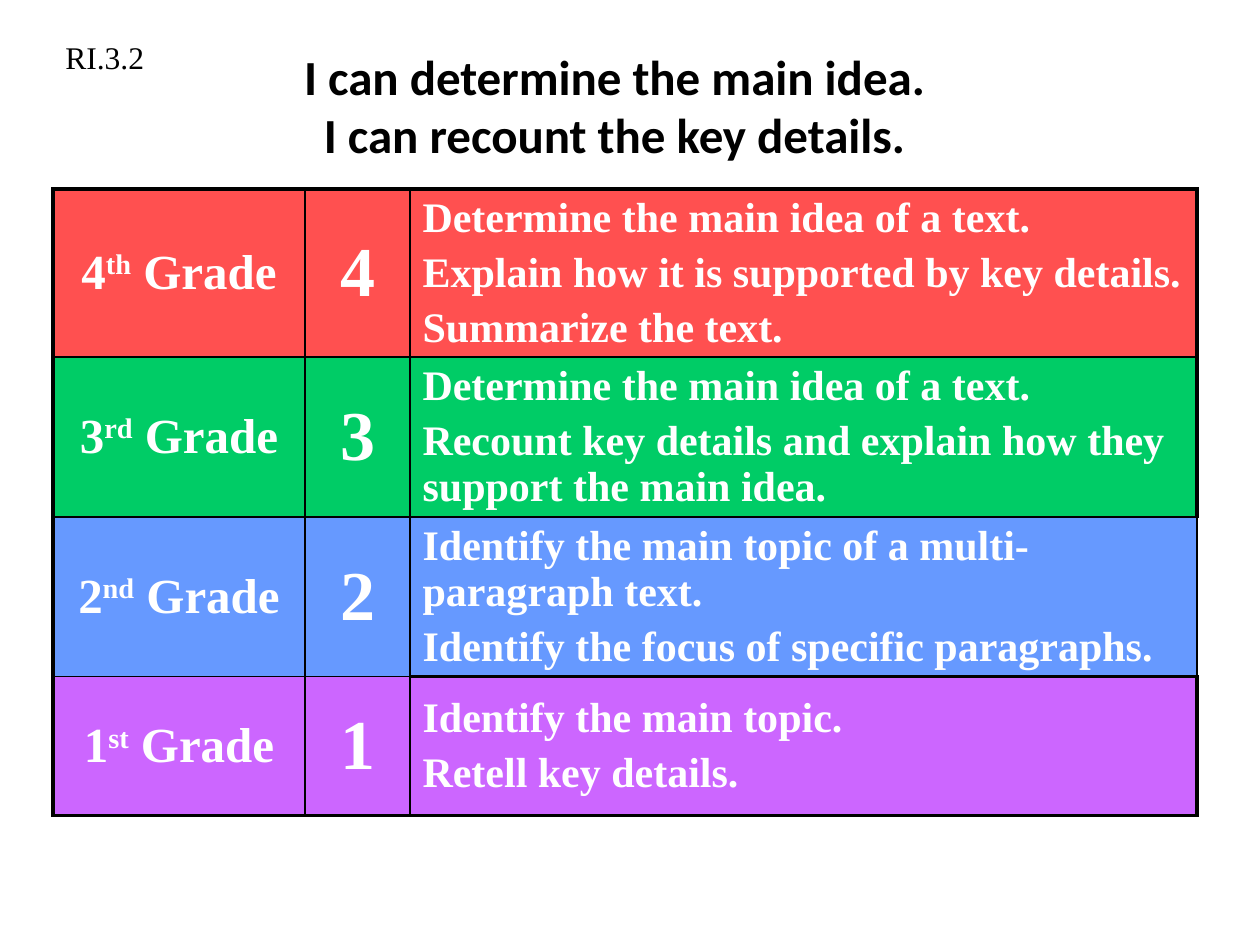
from dataclasses import dataclass

from lxml.etree import SubElement
from pptx import Presentation
from pptx.dml.color import RGBColor
from pptx.enum.text import MSO_ANCHOR, MSO_AUTO_SIZE, PP_ALIGN
from pptx.oxml import parse_xml
from pptx.oxml.ns import nsdecls, qn
from pptx.util import Emu, Pt

PX_PER_INCH = 126
COLORS = {
    "black": "000000",
    "white": "FFFFFF",
    "red": "FF5050",
    "green": "00CC66",
    "blue": "6699FF",
    "purple": "CC66FF",
}
SERIF = "Times New Roman"
COLUMN_WIDTHS = (252, 105, 787)


@dataclass(frozen=True)
class Borders:
    """Line widths in points, in the order the table cell stores them."""
    left: float
    right: float
    top: float
    bottom: float


@dataclass(frozen=True)
class Grade:
    number: str
    suffix: str
    color: str
    height: int
    goals: tuple[str, ...]
    borders: tuple[Borders, Borders, Borders]


GRADES = (
    Grade("4", "th", "red", 139,
          ("Determine the main idea of a text.",
           "Explain how it is supported by key details.",
           "Summarize the text."),
          (Borders(2.25, 1, 2.25, 1.5), Borders(1, 1, 2.25, 1.5), Borders(1, 2.25, 2.25, 1.5))),
    Grade("3", "rd", "green", 160,
          ("Determine the main idea of a text.",
           "Recount key details and explain how they support the main idea."),
          (Borders(2.25, 1, 1.5, 1), Borders(1, 1, 1.5, 1), Borders(1, 2.25, 1.5, 1.5))),
    Grade("2", "nd", "blue", 139,
          ("Identify the main topic of a multi-paragraph text.",
           "Identify the focus of specific paragraphs."),
          (Borders(2.25, 1.5, 1, 1), Borders(1.5, 1.5, 1, 1), Borders(1.5, 1.5, 1.5, 1.5))),
    Grade("1", "st", "purple", 139,
          ("Identify the main topic.", "Retell key details."),
          (Borders(2.25, 1, 1, 1.5), Borders(1, 1, 1, 1.5), Borders(1, 2.25, 1.5, 1.5))),
)


def px(length: int) -> Emu:
    return Emu(round(length * 914400 / PX_PER_INCH))


def rgb(name: str) -> RGBColor:
    return RGBColor.from_string(COLORS[name])


def add_run(paragraph, text: str, size: int, font: str = SERIF, color: str = "white",
            bold: bool = True, raised: bool = False) -> None:
    run = paragraph.add_run()
    run.text = text
    run.font.size = Pt(size)
    run.font.name = font
    run.font.bold = bold
    run.font.color.rgb = rgb(color)
    if raised:
        run.font._element.set("baseline", "30000")


def add_text_frame(slide, left: int, top: int, width: int, height: int):
    frame = slide.shapes.add_textbox(px(left), px(top), px(width), px(height)).text_frame
    frame.word_wrap = True
    return frame


def next_paragraph(cell, first: bool = True, align: PP_ALIGN = PP_ALIGN.CENTER):
    """Return a cell paragraph with 20% spacing before it."""
    frame = cell.text_frame
    paragraph = frame.paragraphs[0] if first else frame.add_paragraph()
    paragraph.alignment = align
    spacing = SubElement(paragraph._p.get_or_add_pPr(), qn("a:spcBef"))
    SubElement(spacing, qn("a:spcPct")).set("val", "20000")
    return paragraph


def style_cell(cell, color: str, borders: Borders) -> None:
    cell.vertical_anchor = MSO_ANCHOR.MIDDLE
    cell.margin_top = cell.margin_bottom = 0
    cell.fill.solid()
    cell.fill.fore_color.rgb = rgb(color)
    widths = (borders.left, borders.right, borders.top, borders.bottom)
    for index, (side, width) in enumerate(zip("LRTB", widths)):
        cell._tc.get_or_add_tcPr().insert(index, parse_xml(
            f'<a:ln{side} {nsdecls("a")} w="{Pt(width)}"><a:solidFill>'
            f'<a:srgbClr val="{COLORS["black"]}"/></a:solidFill></a:ln{side}>'))


def fill_row(cells: list, grade: Grade) -> None:
    for cell, borders in zip(cells, grade.borders):
        style_cell(cell, grade.color, borders)
    name_cell, level_cell, goals_cell = cells

    name = next_paragraph(name_cell)
    add_run(name, grade.number, 28)
    add_run(name, grade.suffix, 28, raised=True)
    add_run(name, " Grade", 28)

    add_run(next_paragraph(level_cell), grade.number, 40)

    for index, goal in enumerate(grade.goals):
        add_run(next_paragraph(goals_cell, index == 0, PP_ALIGN.LEFT), goal, 24)


def main() -> None:
    deck = Presentation()
    deck.slide_width, deck.slide_height = px(1260), px(945)
    slide = deck.slides.add_slide(deck.slide_layouts[6])

    # Title
    title_frame = add_text_frame(slide, 21, 42, 1187, 126)
    title_frame.vertical_anchor = MSO_ANCHOR.MIDDLE
    title = title_frame.paragraphs[0]
    title.alignment = PP_ALIGN.CENTER
    add_run(title, "I can determine the main idea.", 28, "Calibri", "black")
    title.add_line_break()
    add_run(title, "I can recount the key details.", 28, "Calibri", "black")

    # Grade scale
    scale = slide.shapes.add_table(len(GRADES), len(COLUMN_WIDTHS), px(53), px(189),
                                   px(sum(COLUMN_WIDTHS)), px(670))
    table = scale.table
    table.first_row = table.horz_banding = False
    for column, width in zip(table.columns, COLUMN_WIDTHS):
        column.width = px(width)
    for row, grade in zip(table.rows, GRADES):
        row.height = px(grade.height)
        fill_row(list(row.cells), grade)
    scale.height = px(670)

    # Standard code
    code_frame = add_text_frame(slide, 53, 32, 179, 50)
    code_frame.auto_size = MSO_AUTO_SIZE.SHAPE_TO_FIT_TEXT
    add_run(code_frame.paragraphs[0], "RI.3.2", 18, color="black", bold=False)

    deck.save("out.pptx")


if __name__ == "__main__":
    main()
